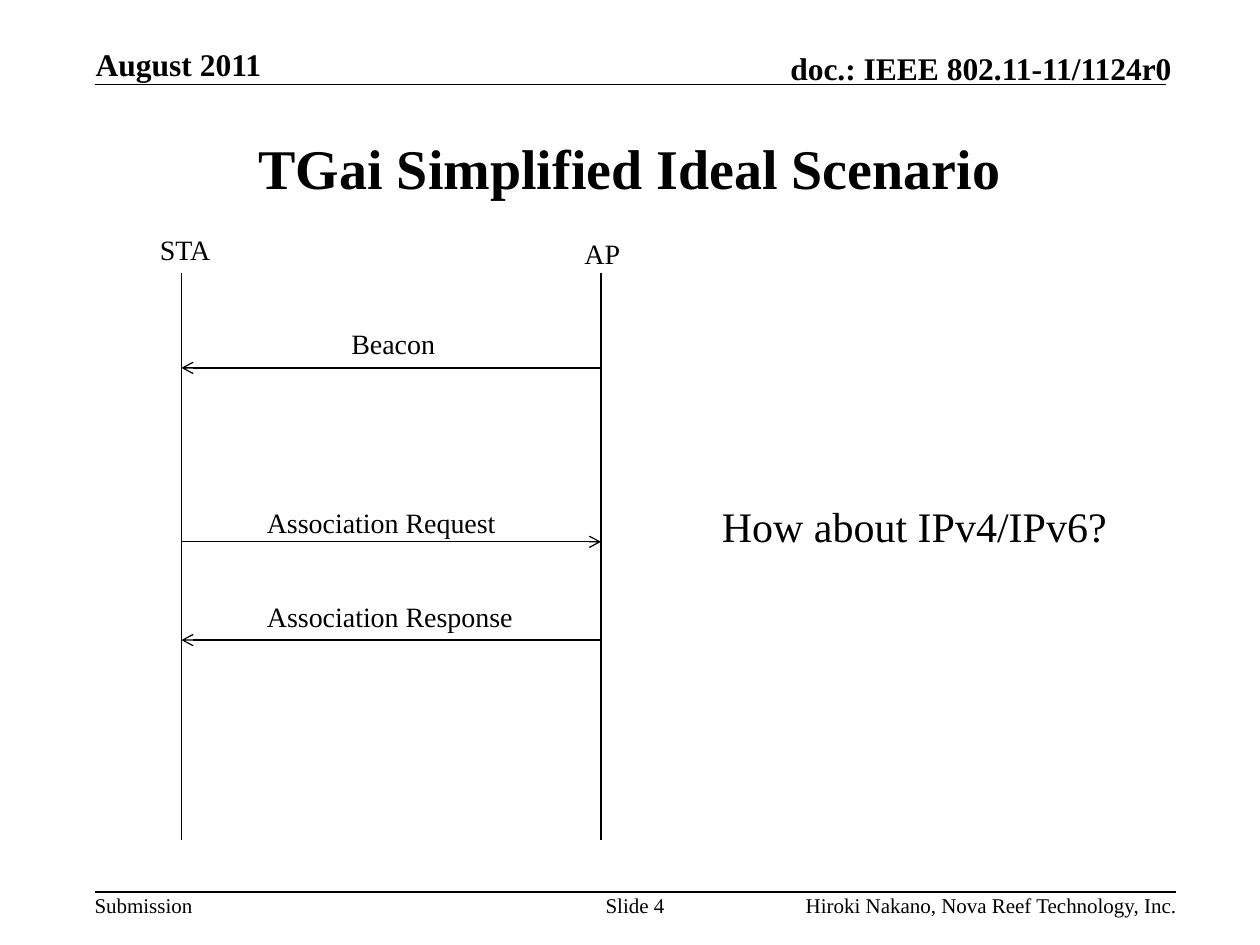
import pptx
import pptx.util
import pptx.dml.color
import pptx.enum.shapes
import pptx.enum.text
import pptx.oxml.ns
import lxml.etree

Inches = pptx.util.Inches
ALIGN = pptx.enum.text.PP_ALIGN
ANCHOR = pptx.enum.text.MSO_ANCHOR
FONT = "Times New Roman"
BLACK = "000000"
STA, AP = 1.44, 4.77


def color(fmt, code):
    fmt.rgb = pptx.dml.color.RGBColor.from_string(code)


def write(shape, text, size, bold=False, align=ALIGN.LEFT, anchor=ANCHOR.TOP):
    frame = shape.text_frame
    frame.text = text
    frame.vertical_anchor = anchor
    para = frame.paragraphs[0]
    para.alignment = align
    font = para.runs[0].font
    font.name = FONT
    font.size = pptx.util.Pt(size)
    font.bold = bold
    color(font.color, BLACK)
    return frame


def label(slide, box, text, size=16):
    shape = slide.shapes.add_textbox(*map(Inches, box))
    write(shape, text, size).word_wrap = False


def margin(slide, box, text, size=12, **style):
    shape = slide.shapes.add_textbox(*map(Inches, box))
    frame = write(shape, text, size, **style)
    frame.word_wrap = True
    frame.margin_left = frame.margin_right = 0
    frame.margin_top = frame.margin_bottom = 0


def line(slide, start, end, width=0.75, arrow=False):
    kind = pptx.enum.shapes.MSO_CONNECTOR.STRAIGHT
    link = slide.shapes.add_connector(kind, *map(Inches, start + end))
    link.line.width = pptx.util.Pt(width)
    color(link.line.fill.fore_color if link.line.fill.type else link.line.color, BLACK)
    qn = pptx.oxml.ns.qn
    if arrow:
        stroke = link.line._get_or_add_ln()
        lxml.etree.SubElement(stroke, qn("a:tailEnd"), type="arrow")
    lxml.etree.SubElement(link._element.spPr, qn("a:effectLst"))


def title(slide, box, text):
    shape = slide.shapes.title
    shape.left, shape.top, shape.width, shape.height = map(Inches, box)
    write(shape, text, 32, True, ALIGN.CENTER, ANCHOR.MIDDLE)


def frame_page(slide):
    line(slide, (0.75, 0.67), (9.25, 0.67), 1)
    line(slide, (0.75, 7.08), (9.33, 7.08), 1)
    head = dict(size=18, bold=True, anchor=ANCHOR.BOTTOM)
    margin(slide, (0.76, 0.36, 2.05, 0.3), "August 2011", **head)
    margin(slide, (5.47, 0.39, 3.83, 0.3), "doc.: IEEE 802.11-11/1124r0",
           align=ALIGN.RIGHT, **head)
    margin(slide, (0.75, 7.08, 0.78, 0.2), "Submission")
    margin(slide, (4.75, 7.08, 0.58, 0.4), "Slide 4", align=ALIGN.CENTER)
    margin(slide, (5.86, 7.08, 3.48, 0.2),
           "Hiroki Nakano, Nova Reef Technology, Inc.", align=ALIGN.RIGHT)


def main():
    deck = pptx.Presentation()
    deck.slide_width, deck.slide_height = Inches(10), Inches(7.5)
    slide = deck.slides.add_slide(deck.slide_layouts[5])
    frame_page(slide)
    title(slide, (0.75, 0.75, 8.5, 1.16), "TGai Simplified Ideal Scenario")

    for name, x, box in (("STA", STA, (1.17, 1.8, 0.61, 0.37)),
                         ("AP", AP, (4.54, 1.83, 0.49, 0.37))):
        label(slide, box, name)
        line(slide, (x, 2.17), (x, 6.67))

    for text, start, end, y, box in (
            ("Beacon", AP, STA, 2.92, (2.69, 2.54, 0.87, 0.37)),
            ("Association Request", STA, AP, 4.3, (2.02, 3.96, 2.04, 0.37)),
            ("Association Response", AP, STA, 5.08, (2.02, 4.71, 2.18, 0.37))):
        label(slide, box, text)
        line(slide, (start, y), (end, y), arrow=True)

    label(slide, (5.63, 3.92, 3.29, 0.5), "How about IPv4/IPv6?", 24)
    deck.save("out.pptx")


if __name__ == "__main__":
    main()
